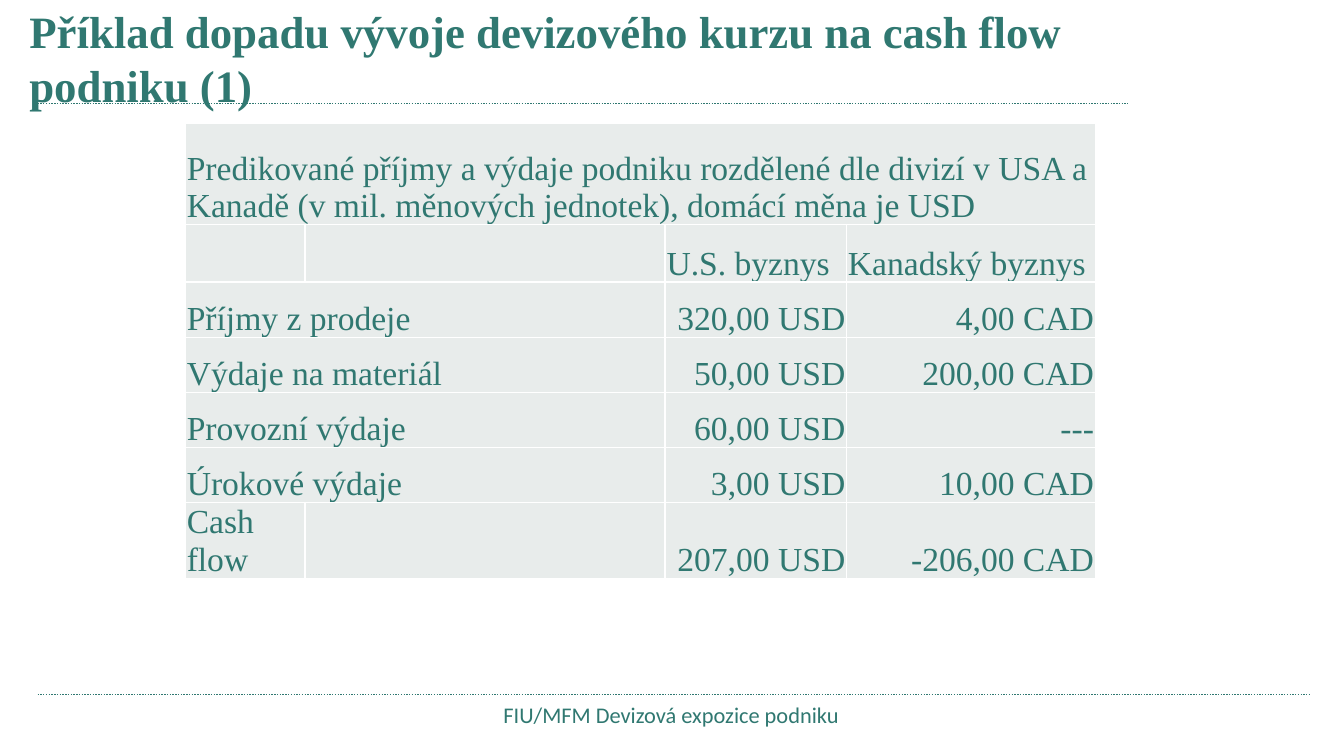
from lxml.etree import SubElement
from pptx import Presentation
from pptx.dml.color import RGBColor
from pptx.enum.dml import MSO_LINE
from pptx.enum.shapes import MSO_CONNECTOR
from pptx.enum.text import MSO_ANCHOR, PP_ALIGN
from pptx.oxml import parse_xml
from pptx.oxml.ns import nsdecls, qn
from pptx.util import Inches, Pt

GREEN, GREY, WHITE = "307871", "E8ECEB", "FFFFFF"
SERIF, SANS = "Times New Roman", "Calibri"

# Content
TITLE = "Příklad dopadu vývoje devizového kurzu na cash flow podniku (1)"
FOOTER = "FIU/MFM Devizová expozice podniku"
ROWS = [
    ("Predikované příjmy a výdaje podniku rozdělené dle divizí v USA a Kanadě "
     "(v mil. měnových jednotek), domácí měna je USD", "", "", ""),
    ("", "", "U.S. byznys", "Kanadský byznys"),
    ("Příjmy z prodeje", "", "320,00 USD", "4,00 CAD"),
    ("Výdaje na materiál", "", "50,00 USD", "200,00 CAD"),
    ("Provozní výdaje", "", "60,00 USD", "---"),
    ("Úrokové výdaje", "", "3,00 USD", "10,00 CAD"),
    ("Cash flow", "", "207,00 USD", "-206,00 CAD"),
]
COL_WIDTHS = [0.89, 2.68, 1.35, 1.85]
ROW_HEIGHTS = [0.75, 0.43] + [0.41] * 5
LAST_MERGED_COL = {0: 3, 2: 1, 3: 1, 4: 1, 5: 1}  # row: last column of its label
RULES = [(0.28, 8.39, 0.77), (0.28, 9.75, 5.17)]  # left, right, y


def color(value):
    return RGBColor.from_string(value)


def write(tf, text, size=18, font=SERIF, bold=False, align=PP_ALIGN.LEFT):
    tf.word_wrap = True
    p = tf.paragraphs[0]
    p.alignment = align
    p.font.size = Pt(size)
    if text:
        r = p.add_run()
        r.text = text
        r.font.size, r.font.name, r.font.bold = Pt(size), font, bold
        r.font.color.rgb = color(GREEN)


def add_text(s, box, text, **fmt):
    tf = s.shapes.add_textbox(*map(Inches, box)).text_frame
    write(tf, text, **fmt)


def add_rule(s, left, right, y):
    line = s.shapes.add_connector(MSO_CONNECTOR.STRAIGHT, Inches(left), Inches(y),
                                  Inches(right), Inches(y))
    line.line.color.rgb = color(GREEN)
    line.line.width = Pt(0.75)
    line.line.dash_style = MSO_LINE.ROUND_DOT
    SubElement(line._element.spPr, qn("a:effectLst"))


def add_borders(cell):
    tcPr = cell._tc.get_or_add_tcPr()
    for i, side in enumerate(("lnL", "lnR", "lnT", "lnB")):
        tcPr.insert(i, parse_xml(
            f'<a:{side} {nsdecls("a")} w="{Pt(1)}"><a:solidFill>'
            f'<a:srgbClr val="{WHITE}"/></a:solidFill></a:{side}>'))


def add_cash_flow_table(s):
    table = s.shapes.add_table(len(ROWS), len(COL_WIDTHS), Inches(1.38), Inches(0.92),
                               Inches(sum(COL_WIDTHS)), Inches(sum(ROW_HEIGHTS))).table
    table.first_row = table.horz_banding = False
    for col, width in zip(table.columns, COL_WIDTHS):
        col.width = Inches(width)
    for row, height in zip(table.rows, ROW_HEIGHTS):
        row.height = Inches(height)
    for i, last in LAST_MERGED_COL.items():
        table.cell(i, 0).merge(table.cell(i, last))
    for i, texts in enumerate(ROWS):
        for j, text in enumerate(texts):
            cell = table.cell(i, j)
            cell.fill.solid()
            cell.fill.fore_color.rgb = color(GREY)
            add_borders(cell)
            cell.vertical_anchor = MSO_ANCHOR.BOTTOM
            cell.margin_left = cell.margin_right = cell.margin_top = Inches(0.01)
            cell.margin_bottom = 0
            is_amount = i > 1 and j > 1
            write(cell.text_frame, text,
                  align=PP_ALIGN.RIGHT if is_amount else PP_ALIGN.LEFT)


prs = Presentation()
prs.slide_width = Inches(10)
prs.slide_height = prs.slide_width * 9 // 16
s = prs.slides.add_slide(prs.slide_layouts[6])

# Dotted rules under the title and above the footer
for rule in RULES:
    add_rule(s, *rule)

add_cash_flow_table(s)

# Title and footer
add_text(s, (0.12, -0.02, 8.11, 0.56), TITLE, size=24, bold=True)
add_text(s, (0.31, 5.17, 9.37, 0.31), FOOTER, size=12, font=SANS, align=PP_ALIGN.CENTER)

prs.save("out.pptx")
